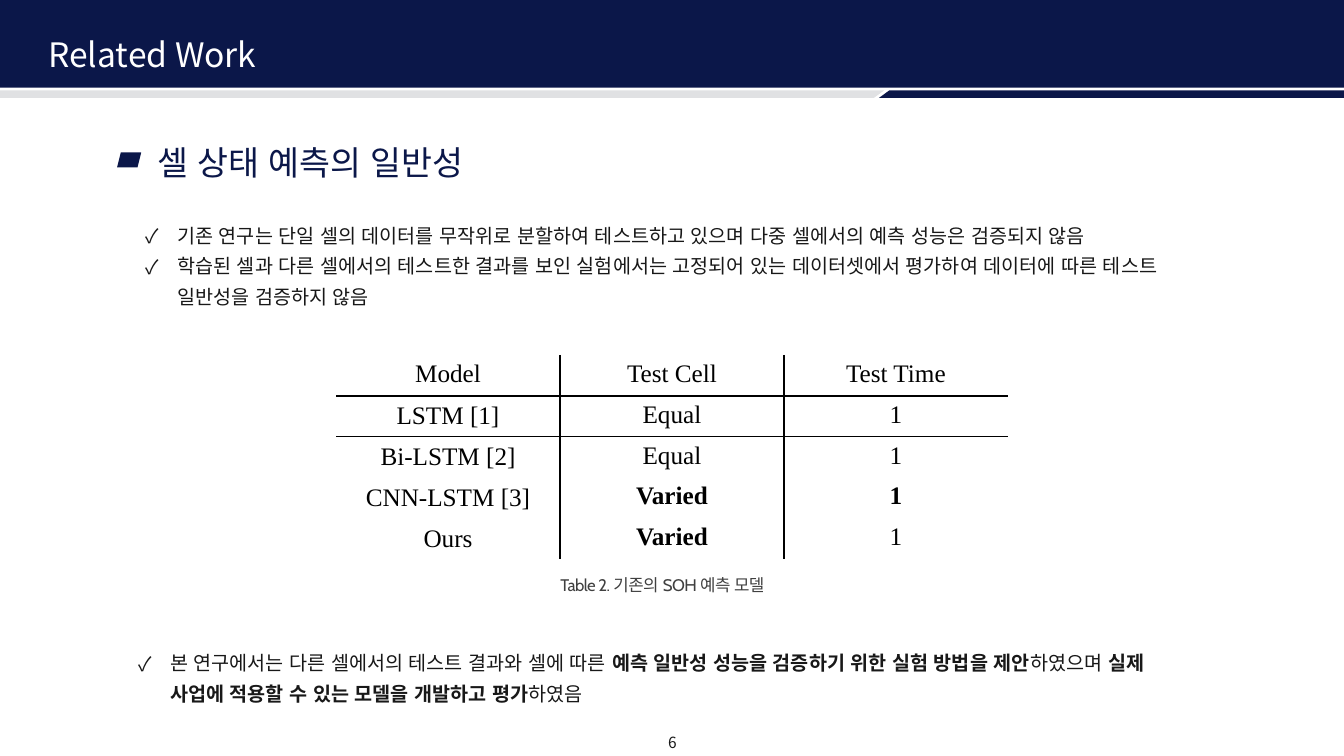
from pptx import Presentation
from pptx import util as u
from pptx.dml.color import RGBColor
from pptx.enum import lang, shapes, text
from pptx.oxml import ns
from lxml import etree

COLORS = {"navy": "0B1749", "stripe": "E0E1E3", "ink": "181818",
          "caption": "404040", "white": "FFFFFF", "black": "000000"}
KOREAN, SERIF, CAPTION = "Noto Sans CJK KR", "Times New Roman", "Cabin"

TITLE = "Related Work"
HEADING = "셀 상태 예측의 일반성"
FINDINGS = [
    [("기존 연구는 단일 셀의 데이터를 무작위로 분할하여 테스트하고 있으며 다중 셀에서의 예측 성능은 검증되지 않음", False)],
    [("학습된 셀과 다른 셀에서의 테스트한 결과를 보인 실험에서는 고정되어 있는 데이터셋에서 평가하여 "
      "데이터에 따른 테스트 일반성을 검증하지 않음", False)],
]
PROPOSAL = [
    [("본 연구에서는 다른 셀에서의 테스트 결과와 셀에 따른 ", False),
     ("예측 일반성 성능을 검증하기 위한 실험 방법을 제안", True),
     ("하였으며 ", False),
     ("실제 사업에 적용할 수 있는 모델을 개발하고 평가", True),
     ("하였음", False)],
]
MODELS = [
    ("Model", "Test Cell", "Test Time"),
    ("LSTM [1]", "Equal", "1"),
    ("Bi-LSTM [2]", "Equal", "1"),
    ("CNN-LSTM [3]", "Varied", "1"),
    ("Ours", "Varied", "1"),
]
BOLD_CELLS = {(3, 1), (3, 2), (4, 1)}
RULES_BELOW = {0: 1.5}
COLUMN_RULE = 1.5
TABLE_CAPTION = "Table 2. 기존의 SOH 예측 모델"
PAGE_NUMBER = "6"

PAGE_WIDTH, PAGE_HEIGHT = 33.87, 19.05
STRIPE_TOP, STRIPE_BOTTOM = 2.28, 2.47
STRIPES = [
    ("stripe", [(0, STRIPE_TOP), (22.28, STRIPE_TOP), (22.02, STRIPE_BOTTOM), (0, STRIPE_BOTTOM)]),
    ("navy", [(22.41, STRIPE_TOP), (PAGE_WIDTH, STRIPE_TOP),
              (PAGE_WIDTH, STRIPE_BOTTOM), (22.15, STRIPE_BOTTOM)]),
]
TABLE_LEFT, TABLE_TOP, TABLE_WIDTH, ROW_HEIGHT = 8.47, 8.94, 16.93, 1.03


def color(name):
    return RGBColor.from_string(COLORS[name])


def paint(shape, name):
    shape.shadow.inherit = False
    shape.fill.solid()
    shape.fill.fore_color.rgb = color(name)
    shape.line.fill.background()


def add_span(para, words, size, name, font=KOREAN, bold=False):
    span = para.add_run()
    span.text = words
    span.font.size = u.Pt(size)
    span.font.name = font
    span.font.bold = bold
    span.font.language_id = lang.MSO_LANGUAGE_ID.KOREAN
    span.font.color.rgb = color(name)
    east = SERIF if font == SERIF else KOREAN
    etree.SubElement(span._r.get_or_add_rPr(), ns.qn("a:ea"), typeface=east)
    return span


def add_box(page, left, top, width, height, anchor=text.MSO_ANCHOR.TOP):
    box = page.shapes.add_textbox(u.Cm(left), u.Cm(top), u.Cm(width), u.Cm(height))
    box.text_frame.word_wrap = True
    box.text_frame.vertical_anchor = anchor
    return box.text_frame


def add_checklist(page, left, top, height, items):
    frame = add_box(page, left, top, 26.64, height)
    for index, spans in enumerate(items):
        para = frame.add_paragraph() if index else frame.paragraphs[0]
        para.line_spacing = 1.3
        properties = para._p.get_or_add_pPr()
        properties.set("marL", str(u.Cm(0.79)))
        properties.set("indent", str(-u.Cm(0.79)))
        etree.SubElement(properties, ns.qn("a:buFont"), typeface=KOREAN)
        etree.SubElement(properties, ns.qn("a:buChar"), char="✓")
        for words, bold in spans:
            add_span(para, words, 14, "ink", bold=bold)


def add_border(cell, side, width):
    properties = cell._tc.get_or_add_tcPr()
    line = etree.Element(ns.qn(f"a:ln{side}"), w=str(u.Pt(width)))
    fill = etree.SubElement(line, ns.qn("a:solidFill"))
    etree.SubElement(fill, ns.qn("a:srgbClr"), val=COLORS["black"])
    position = sum(child.tag.startswith(ns.qn("a:ln")) for child in properties)
    properties.insert(position, line)


def add_model_table(page):
    rows, columns = len(MODELS), len(MODELS[0])
    table = page.shapes.add_table(rows, columns, u.Cm(TABLE_LEFT), u.Cm(TABLE_TOP),
                                  u.Cm(TABLE_WIDTH), u.Cm(ROW_HEIGHT * rows)).table
    table.first_row = table.horz_banding = False
    style = table._tbl.tblPr.find(ns.qn("a:tableStyleId"))
    style.text = "{2D5ABB26-0587-4C30-8999-92F81FD0307C}"
    for r, values in enumerate(MODELS):
        table.rows[r].height = u.Cm(ROW_HEIGHT)
        for c, words in enumerate(values):
            cell = table.cell(r, c)
            cell.fill.background()
            if r and c == 0:
                cell.vertical_anchor = text.MSO_ANCHOR.MIDDLE
            para = cell.text_frame.paragraphs[0]
            para.alignment = text.PP_ALIGN.CENTER
            add_span(para, words, 18, "black", SERIF, (r, c) in BOLD_CELLS)
            borders = [("L", COLUMN_RULE if c else None),
                       ("R", COLUMN_RULE if c < columns - 1 else None),
                       ("T", RULES_BELOW.get(r - 1)),
                       ("B", RULES_BELOW.get(r))]
            for side, width in borders:
                if width:
                    add_border(cell, side, width)


def main():
    deck = Presentation()
    deck.slide_width, deck.slide_height = u.Cm(PAGE_WIDTH), u.Cm(PAGE_HEIGHT)
    page = deck.slides.add_slide(deck.slide_layouts[6])

    banner = page.shapes.add_shape(shapes.MSO_SHAPE.RECTANGLE, 0, 0, u.Cm(PAGE_WIDTH), u.Cm(2.21))
    paint(banner, "navy")
    for name, corners in STRIPES:
        points = [(u.Cm(x), u.Cm(y)) for x, y in corners]
        builder = page.shapes.build_freeform(*points[0])
        builder.add_line_segments(points[1:], close=True)
        paint(builder.convert_to_shape(), name)

    para = add_box(page, 0.97, 0.84, 14.4, 1.19, text.MSO_ANCHOR.MIDDLE).paragraphs[0]
    para.line_spacing = 0.9
    para.space_before = u.Pt(10)
    add_span(para, TITLE, 24, "white")

    para = add_box(page, 3.71, 3.2, 14.88, 1.45, text.MSO_ANCHOR.MIDDLE).paragraphs[0]
    para.line_spacing = 1.3
    add_span(para, HEADING, 24, "navy")
    marker = page.shapes.add_shape(shapes.MSO_SHAPE.PARALLELOGRAM,
                                   u.Cm(2.95), u.Cm(3.84), u.Cm(0.61), u.Cm(0.38))
    paint(marker, "navy")

    add_checklist(page, 3.43, 5.33, 2.51, FINDINGS)
    add_model_table(page)

    frame = add_box(page, 14.12, 14.48, 5.64, 0.51)
    frame.word_wrap = False
    frame.margin_left = frame.margin_right = frame.margin_top = frame.margin_bottom = 0
    span = add_span(frame.paragraphs[0], TABLE_CAPTION, 12, "caption", CAPTION)
    span._r.get_or_add_rPr().set("spc", "-40")

    add_checklist(page, 3.25, 16.1, 1.73, PROPOSAL)

    para = add_box(page, 16.08, 18.34, 1.73, 0.74).paragraphs[0]
    para.alignment = text.PP_ALIGN.CENTER
    add_span(para, PAGE_NUMBER, 11, "ink")

    deck.save("out.pptx")


if __name__ == "__main__":
    main()
